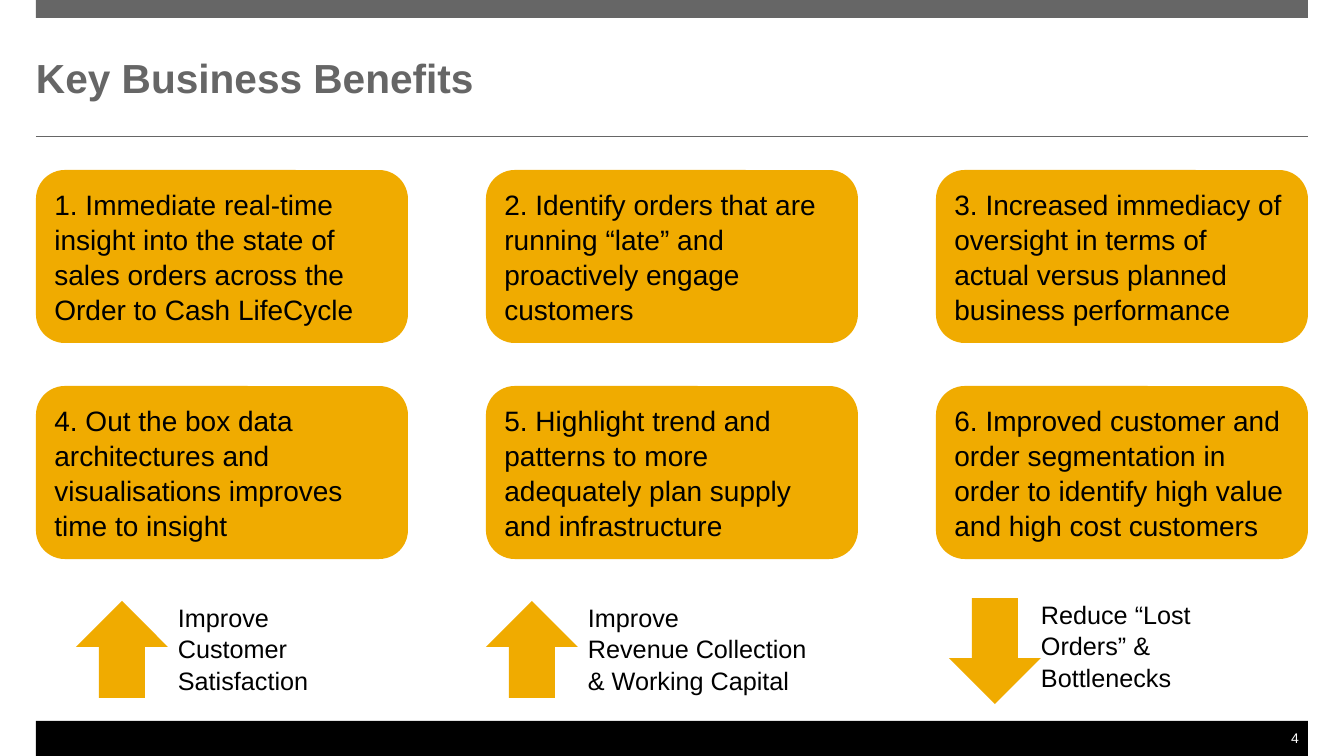
from dataclasses import dataclass

from pptx import Presentation
from pptx import util as u
from pptx.dml.color import RGBColor
from pptx.enum import shapes, text
from pptx.oxml.ns import qn

PX = 914400 / 100.8  # EMU in one px


@dataclass(frozen=True)
class Theme:
    font: str = "Arial"
    grey: str = "666666"
    black: str = "000000"
    white: str = "FFFFFF"
    gold: str = "F0AB00"
    title_size: int = 29
    benefit_size: int = 20
    outcome_size: int = 18
    number_size: int = 10
    line_spacing: float = 1.04


THEME = Theme()
TITLE = "Key Business Benefits"
BENEFITS = [
    "1. Immediate real-time insight into the state of sales orders across the Order to Cash LifeCycle",
    "2. Identify orders that are running “late” and proactively engage customers",
    "3. Increased immediacy of oversight in terms of actual versus planned business performance",
    "4. Out the box data architectures and visualisations improves time to insight",
    "5. Highlight trend and patterns to more adequately plan supply and infrastructure",
    "6. Improved customer and order segmentation in order to identify high value and high cost customers",
]
UP, DOWN = shapes.MSO_SHAPE.UP_ARROW, shapes.MSO_SHAPE.DOWN_ARROW
# Arrow kind, box of arrow and text, gap between them, wording
OUTCOMES = [
    (UP, (76, 601, 324, 97), 10, "Improve\vCustomer Satisfaction"),
    (UP, (486, 601, 324, 97), 10, "Improve\vRevenue Collection & Working Capital"),
    (DOWN, (949, 598, 314, 106), 0, "Reduce “Lost Orders” & Bottlenecks"),
]


def emu(*lengths):
    return [u.Emu(round(length * PX)) for length in lengths]


def write(shape, wording, size, color, insets=(0, 0, 0, 0), bold=False,
          align=text.PP_ALIGN.LEFT, anchor=text.MSO_ANCHOR.TOP,
          spacing=None, wrap=True):
    frame = shape.text_frame
    frame.text = wording
    frame.word_wrap = wrap
    frame.auto_size = text.MSO_AUTO_SIZE.NONE
    frame.vertical_anchor = anchor
    (frame.margin_left, frame.margin_top,
     frame.margin_right, frame.margin_bottom) = emu(*insets)
    for para in frame.paragraphs:
        para.alignment = align
        para.line_spacing = spacing
        for span in para.runs:
            span.font.name = THEME.font
            span.font.size = u.Pt(size)
            span.font.bold = bold
            span.font.color.rgb = RGBColor.from_string(color)


def add_filled(page, kind, box, color):
    shape = page.shapes.add_shape(kind, *emu(*box))
    shape.shadow.inherit = False
    shape.fill.solid()
    shape.fill.fore_color.rgb = RGBColor.from_string(color)
    shape.line.fill.background()
    return shape


def add_header(page, box):
    left, top, width, height = box
    # Top bar
    add_filled(page, shapes.MSO_SHAPE.RECTANGLE, (left, top, width, 18), THEME.grey)
    # Title
    title = page.shapes.title
    title.left, title.top, title.width, title.height = emu(left, top + 35, width, 84)
    write(title, TITLE, THEME.title_size, THEME.grey, bold=True,
          anchor=text.MSO_ANCHOR.MIDDLE)
    # Rule below the title
    bottom = top + height
    rule = page.shapes.add_connector(shapes.MSO_CONNECTOR.STRAIGHT,
                                     *emu(left, bottom, left + width, bottom))
    rule.line.color.rgb = RGBColor.from_string(THEME.grey)
    rule.line.width = u.Pt(0.5)
    properties = rule._element.spPr
    properties.append(properties.makeelement(qn("a:effectLst"), {}))


def add_benefits(page, box, columns=3, rows=2, card_width=372, card_height=173):
    left, top, width, height = box
    step_x = (width - card_width) / (columns - 1)
    step_y = (height - card_height) / (rows - 1)
    for index, wording in enumerate(BENEFITS):
        row, column = divmod(index, columns)
        card = add_filled(page, shapes.MSO_SHAPE.ROUNDED_RECTANGLE,
                          (left + column * step_x, top + row * step_y,
                           card_width, card_height), THEME.gold)
        write(card, wording, THEME.benefit_size, THEME.black,
              insets=(10, 8, 10, 8), spacing=THEME.line_spacing)


def add_outcome(page, kind, box, gap, wording, arrow_width=92):
    left, top, width, height = box
    add_filled(page, kind, (left, top, arrow_width, height), THEME.gold)
    offset = arrow_width + gap
    label = page.shapes.add_textbox(*emu(left + offset, top, width - offset, 92))
    write(label, wording, THEME.outcome_size, THEME.black,
          spacing=THEME.line_spacing)


def add_footer(page, box, number):
    left, top, width, height = box
    add_filled(page, shapes.MSO_SHAPE.RECTANGLE, box, THEME.black)
    # Page number
    label = page.shapes.add_textbox(*emu(left + width - 27, top + 9, 27, 17))
    write(label, number, THEME.number_size, THEME.white, insets=(0, 0, 9, 0),
          align=text.PP_ALIGN.RIGHT, wrap=False)


def main():
    deck = Presentation()
    deck.slide_width, deck.slide_height = emu(1344, 756)
    page = deck.slides.add_slide(deck.slide_layouts.get_by_name("Title Only"))
    add_header(page, (36, 0, 1272, 136))
    add_benefits(page, (36, 170, 1272, 389))
    for outcome in OUTCOMES:
        add_outcome(page, *outcome)
    add_footer(page, (36, 721, 1272, 35), "4")
    deck.save("out.pptx")


if __name__ == "__main__":
    main()
